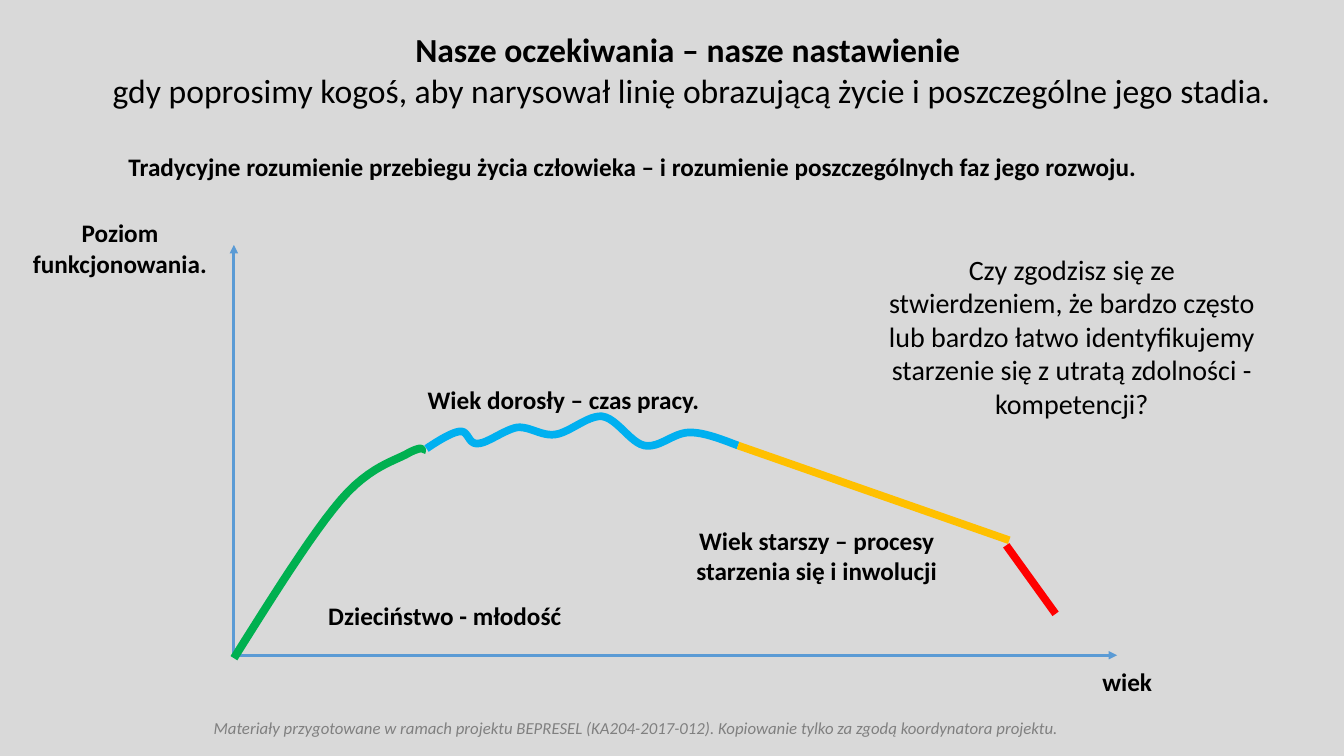
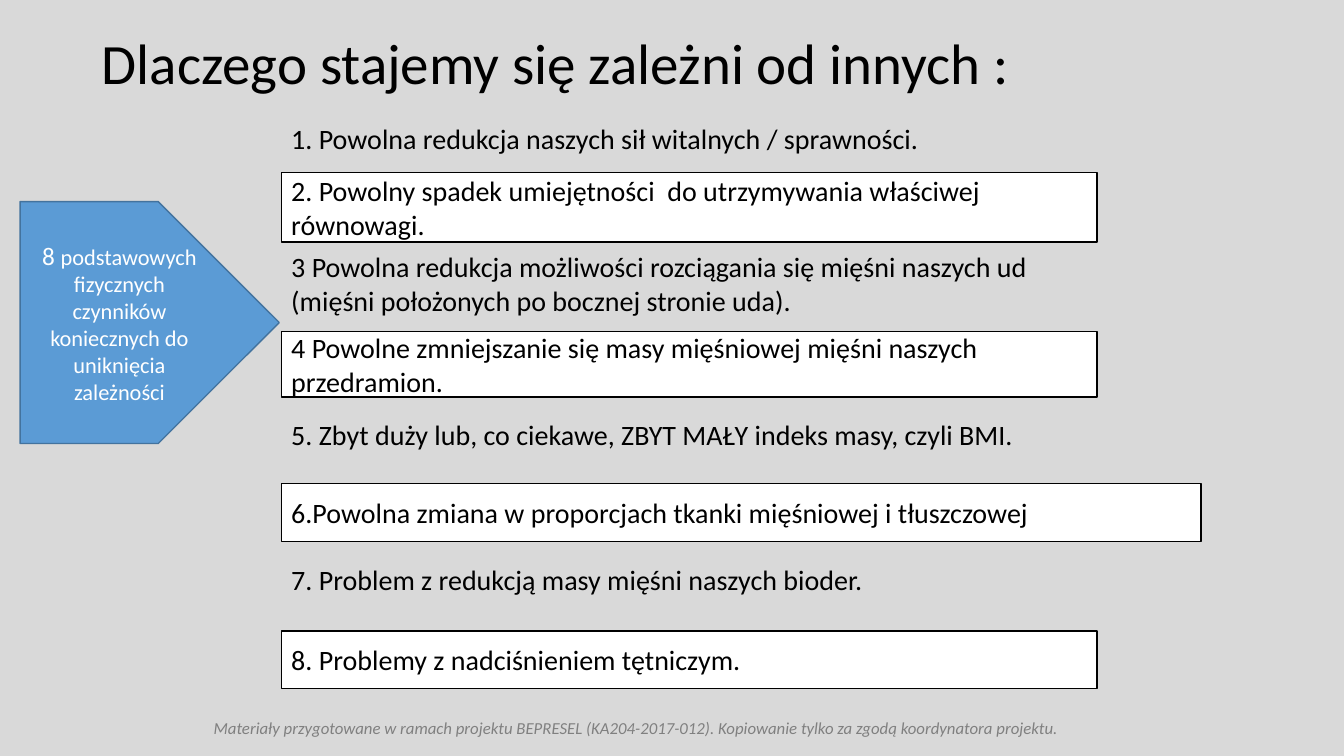
from dataclasses import dataclass

from lxml import etree
from pptx import Presentation
from pptx.dml.color import RGBColor
from pptx.enum.shapes import MSO_CONNECTOR, MSO_SHAPE
from pptx.enum.text import MSO_ANCHOR, MSO_AUTO_SIZE, PP_ALIGN
from pptx.oxml.ns import qn
from pptx.util import Inches, Pt

LEFT, CENTER = PP_ALIGN.LEFT, PP_ALIGN.CENTER
TOP, MIDDLE = MSO_ANCHOR.TOP, MSO_ANCHOR.MIDDLE
RECT, ARROW = MSO_SHAPE.RECTANGLE, MSO_SHAPE.PENTAGON
STRAIGHT = MSO_CONNECTOR.STRAIGHT
FIXED = MSO_AUTO_SIZE.NONE

FONT = "Calibri"
BLACK, WHITE, GREY, PAPER = "000000", "FFFFFF", "808080", "D9D9D9"
BLUE, NAVY, SKY = "5B9BD5", "43739E", "00B0F0"
GREEN, GOLD, RED = "00B050", "FFC000", "FF0000"
STEPS = 12
FOOTER = (
    "Materiały przygotowane w ramach projektu BEPRESEL (KA204-2017-012). "
    "Kopiowanie tylko za zgodą koordynatora projektu."
)

Point = tuple[float, float]


@dataclass
class Box:
    left: float
    top: float
    width: float
    height: float

    def emu(self) -> list:
        return [Inches(v) for v in (self.left, self.top, self.width, self.height)]


@dataclass
class Label:
    text: str
    box: Box


@dataclass
class Line:
    start: Point
    end: Point
    color: str
    weight: float = 5.5
    arrow: bool = False


@dataclass
class Curve:
    points: list[Point]
    color: str
    weight: float


@dataclass
class Factor:
    text: str
    top: float
    height: float
    boxed: bool = False
    width: float = 8.09


AXES = [
    Line((2.32, 6.5), (2.32, 2.43), BLUE, 2, True),
    Line((2.32, 6.5), (11.08, 6.5), BLUE, 2, True),
]
CURVES = [
    Curve([(2.32, 6.53), (2.71, 5.91), (3.09, 5.3), (3.38, 4.96),
           (3.67, 4.62), (3.93, 4.57), (4.06, 4.49),
           (4.2, 4.42), (4.19, 4.46), (4.18, 4.49)], GREEN, 5.75),
    Curve([(4.23, 4.45), (4.35, 4.37), (4.48, 4.29), (4.56, 4.28),
           (4.65, 4.27), (4.64, 4.41), (4.74, 4.4),
           (4.83, 4.4), (5.01, 4.26), (5.13, 4.24),
           (5.26, 4.23), (5.37, 4.33), (5.51, 4.31),
           (5.65, 4.29), (5.83, 4.12), (5.97, 4.13),
           (6.12, 4.15), (6.25, 4.39), (6.39, 4.42),
           (6.54, 4.45), (6.68, 4.29), (6.84, 4.29),
           (6.99, 4.29), (7.16, 4.36), (7.32, 4.42)], SKY, 5.5),
]
DECLINE = [
    Line((7.32, 4.42), (10.01, 5.36), GOLD),
    Line((9.98, 5.41), (10.47, 6.09), RED),
]
LABELS = [
    Label("Poziom funkcjonowania.", Box(0, 2.11, 2.38, 0.71)),
    Label("wiek", Box(9.99, 6.56, 2.38, 0.4)),
    Label("Tradycyjne rozumienie przebiegu życia człowieka – i rozumienie "
          "poszczególnych faz jego rozwoju.", Box(0.64, 1.45, 11.27, 0.4)),
    Label("Dzieciństwo - młodość ", Box(2.74, 5.91, 3.4, 0.4)),
    Label("Wiek dorosły – czas pracy.", Box(3.89, 3.76, 3.4, 0.4)),
    Label("Wiek starszy – procesy starzenia się i inwolucji",
          Box(6.4, 5.16, 3.4, 0.71)),
]
FACTORS = [
    Factor("1. Powolna redukcja naszych sił witalnych / sprawności.", 0.97, 0.8),
    Factor("2. Powolny spadek umiejętności  do utrzymywania właściwej "
           "równowagi.", 1.71, 0.69, True),
    Factor("3 Powolna redukcja możliwości rozciągania się mięśni naszych ud\n"
           "(mięśni położonych po bocznej stronie uda).", 2.35, 0.92),
    Factor("4 Powolne zmniejszanie się masy mięśniowej mięśni naszych "
           "przedramion.", 3.29, 0.65, True),
    Factor("5. Zbyt duży lub, co ciekawe, ZBYT MAŁY indeks masy, czyli BMI.",
           4.03, 0.56),
    Factor("6.Powolna zmiana w proporcjach tkanki mięśniowej i tłuszczowej",
           4.8, 0.57, True, 9.12),
    Factor("7. Problem z redukcją masy mięśni naszych bioder.", 5.46, 0.57),
    Factor("8. Problemy z nadciśnieniem tętniczym.", 6.26, 0.57, True),
]


def paint(form, color: str) -> None:
    form.solid()
    form.fore_color.rgb = RGBColor.from_string(color)


def stroke(line, color: str, weight: float) -> None:
    paint(line.fill, color)
    line.width = Pt(weight)


def write(frame, text: str, *, size: float = 20, color: str = BLACK,
          bold: bool = False, italic: bool = False, align=LEFT,
          anchor=MIDDLE, spacing: float = 1.0) -> None:
    frame.word_wrap = True
    frame.auto_size = FIXED
    frame.vertical_anchor = anchor
    frame.text = text
    for para in frame.paragraphs:
        para.alignment = align
        para.line_spacing = spacing
        for run in para.runs:
            run.font.name = FONT
            run.font.size = Pt(size)
            run.font.bold = bold
            run.font.italic = italic
            paint(run.font.fill, color)


def add_text(slide, text: str, box: Box, **style) -> None:
    write(slide.shapes.add_textbox(*box.emu()).text_frame, text, **style)


def add_shape(slide, kind, box: Box, fill: str, edge: str):
    shape = slide.shapes.add_shape(kind, *box.emu())
    shape.shadow.inherit = False
    paint(shape.fill, fill)
    stroke(shape.line, edge, 1)
    return shape


def add_line(slide, line: Line) -> None:
    ends = [Inches(v) for v in (*line.start, *line.end)]
    shape = slide.shapes.add_connector(STRAIGHT, *ends)
    stroke(shape.line, line.color, line.weight)
    if line.arrow:
        tail = etree.SubElement(shape.line._get_or_add_ln(), qn("a:tailEnd"))
        tail.set("type", "triangle")
    etree.SubElement(shape._element.spPr, qn("a:effectLst"))


def bezier(nodes: list[Point], t: float) -> tuple:
    u = 1 - t
    parts = (u ** 3, 3 * u * u * t, 3 * u * t * t, t ** 3)
    return tuple(Inches(sum(k * v for k, v in zip(parts, axis)))
                 for axis in zip(*nodes))


def add_curve(slide, curve: Curve) -> None:
    points = curve.points
    trace = [bezier(points[i:i + 4], step / STEPS)
             for i in range(0, len(points) - 1, 3)
             for step in range(1, STEPS + 1)]
    start = [Inches(v) for v in points[0]]
    pen = slide.shapes.build_freeform(*start)
    pen.add_line_segments(trace, close=False)
    shape = pen.convert_to_shape()
    shape.shadow.inherit = False
    shape.fill.background()
    stroke(shape.line, curve.color, curve.weight)


def add_slide(deck, title: str, box: Box, **style):
    slide = deck.slides.add_slide(deck.slide_layouts[5])
    head = slide.shapes.title
    head.left, head.top, head.width, head.height = box.emu()
    write(head.text_frame, title, **style)
    add_text(slide, FOOTER, Box(2.02, 7.07, 9.38, 0.3),
             size=12, color=GREY, italic=True, anchor=TOP)
    return slide


def draw_life(deck) -> None:
    slide = add_slide(
        deck,
        "Nasze oczekiwania – nasze nastawienie \n"
        "gdy poprosimy kogoś, aby narysował linię obrazującą życie "
        "i poszczególne jego stadia.",
        Box(0.38, 0.03, 12.96, 1.32), size=24, bold=True, align=CENTER)
    slide.shapes.title.text_frame.paragraphs[1].runs[0].font.bold = False
    for axis in AXES:
        add_line(slide, axis)
    for curve in CURVES:
        add_curve(slide, curve)
    for line in DECLINE:
        add_line(slide, line)
    for label in LABELS:
        add_text(slide, label.text, label.box,
                 size=18, bold=True, align=CENTER, anchor=TOP)
    add_text(slide,
             "Czy zgodzisz się ze stwierdzeniem, że bardzo często lub bardzo "
             "łatwo identyfikujemy starzenie się z utratą zdolności - "
             "kompetencji?", Box(8.67, 2.43, 3.92, 1.81), align=CENTER)


def draw_causes(deck) -> None:
    slide = add_slide(deck, "Dlaczego stajemy się zależni od innych :",
                      Box(0.91, 0.4, 11.5, 0.59), size=40.7, spacing=0.7)
    for item in FACTORS:
        box = Box(2.79, item.top, item.width, item.height)
        if item.boxed:
            shape = add_shape(slide, RECT, box, WHITE, BLACK)
            write(shape.text_frame, item.text)
        else:
            add_text(slide, item.text, box)
    arrow = add_shape(slide, ARROW, Box(0.2, 2, 2.57, 2.4), BLUE, NAVY)
    write(arrow.text_frame, "8 ", size=18, color=WHITE, align=CENTER)
    run = arrow.text_frame.paragraphs[0].add_run()
    run.text = ("podstawowych fizycznych czynników koniecznych do "
                "uniknięcia zależności")
    run.font.name = FONT
    run.font.size = Pt(16)
    paint(run.font.fill, WHITE)


def main() -> None:
    deck = Presentation()
    deck.slide_width, deck.slide_height = Inches(13.33), Inches(7.5)
    paint(deck.slide_master.background.fill, PAPER)
    draw_life(deck)
    draw_causes(deck)
    deck.save("out.pptx")


if __name__ == "__main__":
    main()
